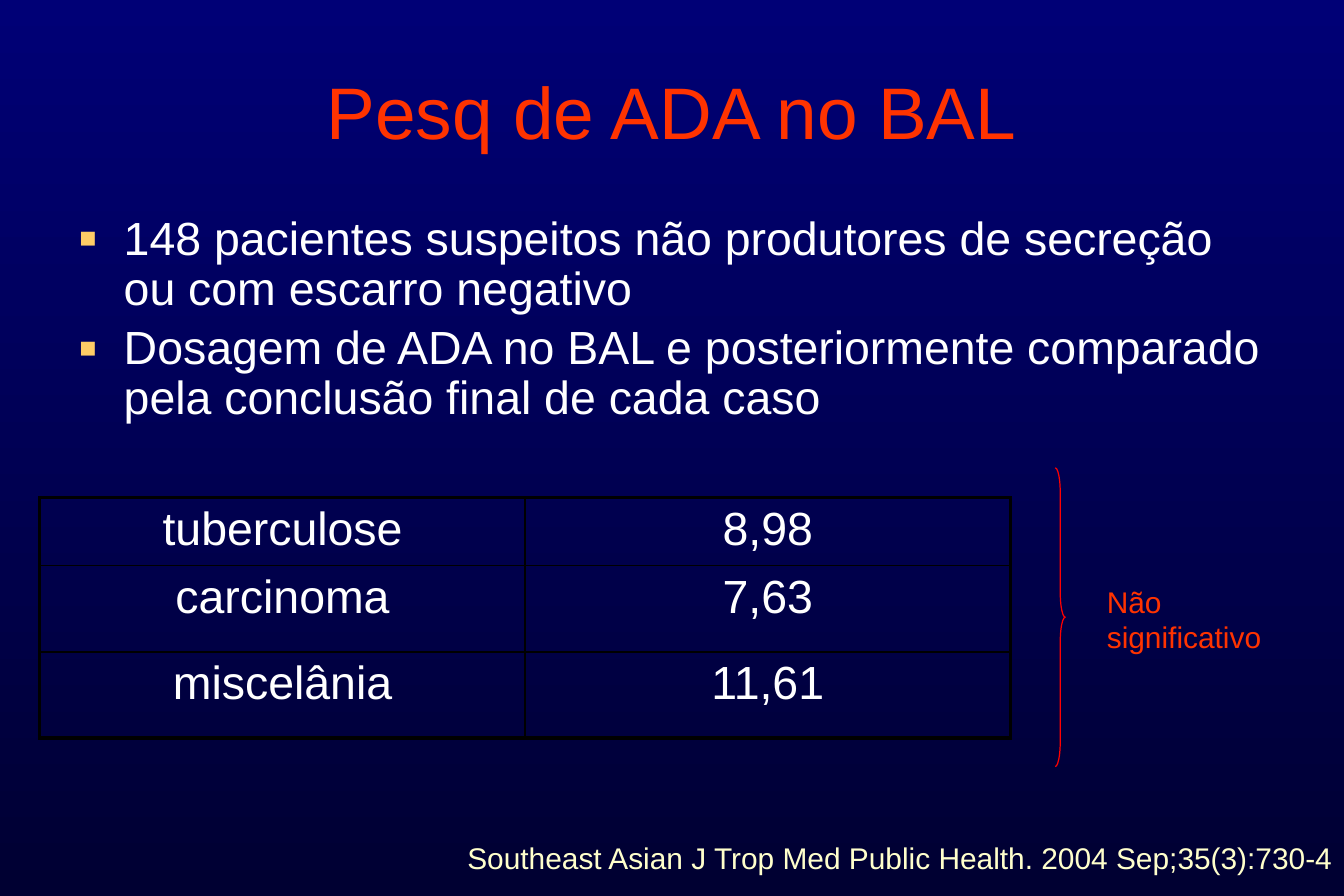
from lxml import etree
from pptx import Presentation
from pptx import util as u
from pptx.dml.color import RGBColor
from pptx.enum import shapes, text
from pptx.oxml.ns import qn

NAVY = RGBColor(0x00, 0x00, 0x76)
NIGHT = RGBColor(0x00, 0x00, 0x32)
WHITE = RGBColor(0xFF, 0xFF, 0xFF)
BLACK = RGBColor(0x00, 0x00, 0x00)
CREAM = RGBColor(0xFF, 0xFF, 0xCC)
GOLD = RGBColor(0xFF, 0xCC, 0x66)
ORANGE = RGBColor(0xFF, 0x33, 0x00)
RED = RGBColor(0xFF, 0x00, 0x00)

LEFT, MID, RIGHT = text.PP_ALIGN.LEFT, text.PP_ALIGN.CENTER, text.PP_ALIGN.RIGHT
FACE = "Arial"


def put(item, form):
    for key, value in form.items():
        setattr(item, key, value)


def node(parent, tag, **attrs):
    return etree.SubElement(parent, qn(tag), **attrs)


class Deck:
    def __init__(self, wide, high):
        self.show = Presentation()
        put(self.show, {"slide_width": u.Pt(wide), "slide_height": u.Pt(high)})
        self.slide = self.show.slides.add_slide(self.show.slide_layouts[6])

    def back(self, *tones):
        fill = self.slide.background.fill
        fill.gradient()
        fill.gradient_angle = 270
        for stop, tone in zip(fill.gradient_stops, tones):
            stop.color.rgb = tone

    def style(self, para, size, tone, **form):
        put(para, form)
        put(para.font, {"name": FACE, "size": u.Pt(size)})
        para.font.color.rgb = tone

    def bullet(self, para):
        props = para._p.get_or_add_pPr()
        put_in = u.Pt(27)
        props.set("marL", str(put_in))
        props.set("indent", str(-put_in))
        node(node(props, "a:buClr"), "a:srgbClr", val=str(GOLD))
        node(props, "a:buSzPct", val="120000")
        node(props, "a:buFont", typeface=FACE)
        node(props, "a:buChar", char="▪")

    def words(self, box, lines, size, tone, gap=0, dots=False,
              anchor=text.MSO_ANCHOR.TOP, **form):
        frame = self.slide.shapes.add_textbox(*map(u.Pt, box)).text_frame
        put(frame, {"word_wrap": True, "vertical_anchor": anchor})
        for i, line in enumerate(lines):
            para = frame.paragraphs[0] if i == 0 else frame.add_paragraph()
            para.text = line
            if dots:
                self.bullet(para)
            self.style(para, size, tone, **form)
            if i:
                para.space_before = u.Pt(gap)

    def edge(self, cell, side, width):
        line = node(cell._tc.get_or_add_tcPr(), "a:ln" + side, w=str(u.Pt(width)))
        node(node(line, "a:solidFill"), "a:srgbClr", val=str(BLACK))

    def table(self, box, rows, highs, size):
        last, end = len(rows) - 1, len(rows[0]) - 1
        grid = self.slide.shapes.add_table(last + 1, end + 1, *map(u.Pt, box)).table
        put(grid, {"first_row": False, "horz_banding": False})
        for r, row in enumerate(rows):
            grid.rows[r].height = u.Pt(highs[r])
            for c, word in enumerate(row):
                cell = grid.cell(r, c)
                cell.text = word
                self.style(cell.text_frame.paragraphs[0], size, WHITE, alignment=MID)
                # Thick outer edges, thin inner ones
                outer = {"L": c == 0, "R": c == end, "T": r == 0, "B": r == last}
                for side, thick in outer.items():
                    self.edge(cell, side, 2.25 if thick else 1)
                cell.fill.background()

    def brace(self, box, tone):
        mark = self.slide.shapes.add_shape(
            shapes.MSO_SHAPE.RIGHT_BRACE, *map(u.Pt, box))
        mark.shadow.inherit = False
        mark.adjustments[0] = 2.5
        mark.fill.background()
        mark.line.color.rgb = tone
        mark.line.width = u.Pt(0.75)


def main():
    deck = Deck(810, 540)
    deck.back(NAVY, NIGHT)

    # Citation
    deck.words((0, 502.5, 810, 37.5),
               ["Southeast Asian J Trop Med Public Health. 2004 Sep;35(3):730-4"],
               18, CREAM, alignment=RIGHT)

    # Title and main points
    deck.words((40.5, 21.5, 729, 90), ["Pesq de ADA no BAL"], 44, ORANGE,
               anchor=text.MSO_ANCHOR.MIDDLE, alignment=MID)
    deck.words((40.5, 126, 729, 168), [
        "148 pacientes suspeitos não produtores de secreção ou com escarro negativo",
        "Dosagem de ADA no BAL e posteriormente comparado pela conclusão final de cada caso",
    ], 28, WHITE, gap=5.6, dots=True, alignment=LEFT, line_spacing=0.9)

    # ADA values
    deck.table((24, 300, 585, 126), [
        ("tuberculose", "8,98"),
        ("carcinoma", "7,63"),
        ("miscelânia", "11,61"),
    ], (22, 52, 52), 28)

    # Verdict beside the table
    deck.brace((636, 282, 6, 180), RED)
    deck.words((660, 348, 126, 50), ["Não significativo"], 18, ORANGE, alignment=LEFT)

    deck.show.save("out.pptx")


if __name__ == "__main__":
    main()
